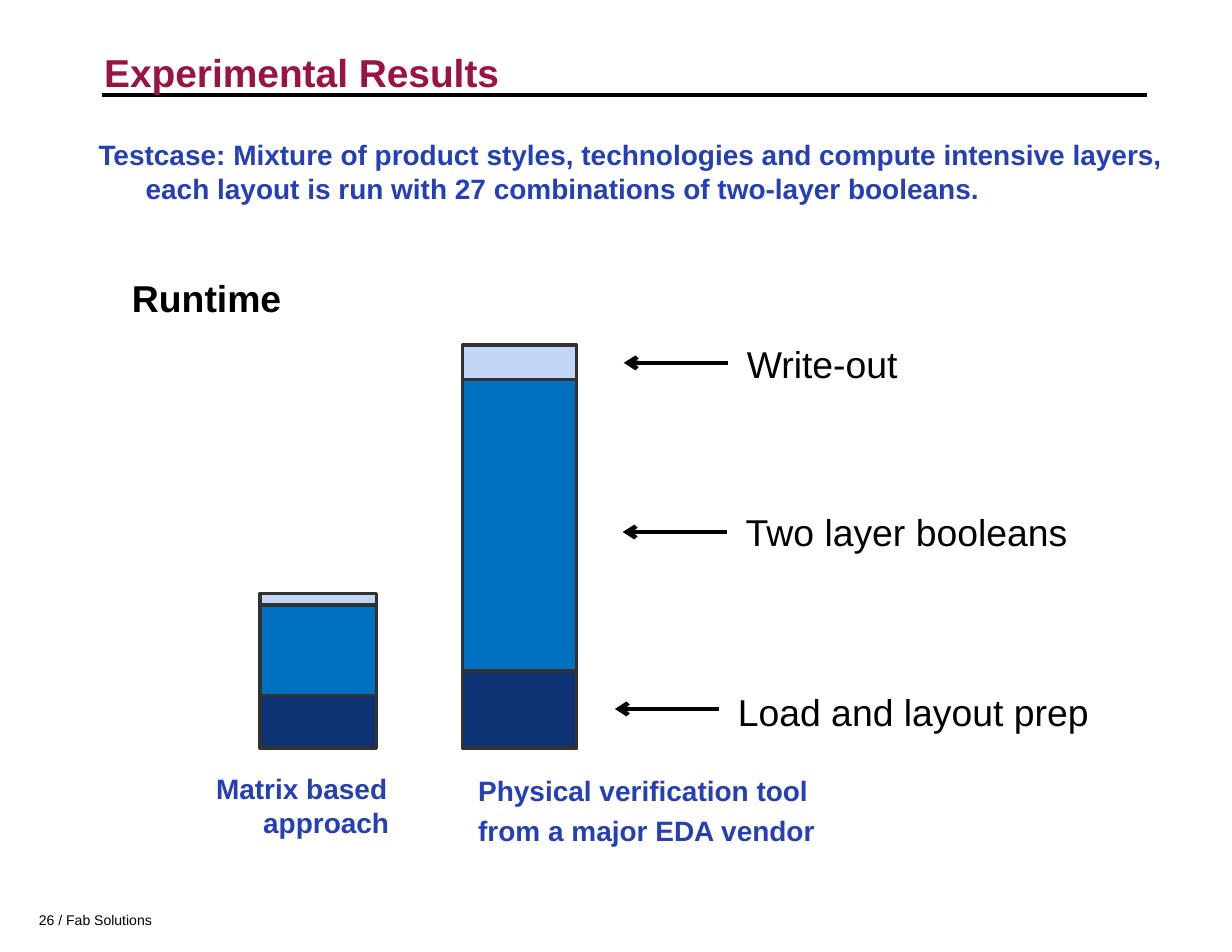
from lxml import etree
from pptx import Presentation
from pptx import util as u
from pptx.dml.color import RGBColor
from pptx.enum import shapes, text
from pptx.oxml import ns

BLACK, MAROON, BLUE, OUTLINE = "000000", "9B1244", "253FB6", "323232"
LOAD, BOOLEANS, OUTPUT = "0D3374", "0070C0", "C3D6F8"


def rgb(value):
    return RGBColor.from_string(value)


class RuntimeSlide:
    font = "Arial"

    def __init__(self, slide):
        self.slide = slide

    def label(self, box, lines, size, color=BLACK, bold=False, wrap=True,
              inset=(0.1, 0.05), hanging=0, before=0, spacing=None):
        holder = self.slide.shapes.add_textbox(*map(u.Inches, box))
        frame = holder.text_frame
        frame.word_wrap = wrap
        frame.vertical_anchor = text.MSO_ANCHOR.TOP
        frame.margin_left = frame.margin_right = u.Inches(inset[0])
        frame.margin_top = frame.margin_bottom = u.Inches(inset[1])
        for index, line in enumerate(lines):
            paragraph = frame.paragraphs[0] if index == 0 else frame.add_paragraph()
            if hanging:
                properties = paragraph._p.get_or_add_pPr()
                properties.set("marL", str(u.Inches(hanging)))
                properties.set("indent", str(-u.Inches(hanging)))
            if index:
                paragraph.space_before = u.Pt(before)
            if spacing:
                paragraph.line_spacing = spacing
            run = paragraph.add_run()
            run.text = line
            run.font.name, run.font.size, run.font.bold = self.font, u.Pt(size), bold
            run.font.color.rgb = rgb(color)

    def caption(self, box, *lines):
        self.label(box, lines, 18, BLUE, bold=True, inset=(0.11, 0.06),
                   hanging=0.42, before=3.6)

    def line(self, start, end, width, arrow=False):
        rule = self.slide.shapes.add_connector(
            shapes.MSO_CONNECTOR.STRAIGHT, *map(u.Inches, start + end))
        rule.line.color.rgb = rgb(BLACK)
        rule.line.width = u.Pt(width)
        properties = rule._element.spPr
        if arrow:
            outline = properties.find(ns.qn("a:ln"))
            etree.SubElement(outline, ns.qn("a:tailEnd"), type="arrow")
        etree.SubElement(properties, ns.qn("a:effectLst"))

    def stacked_bar(self, left, width, bottom, parts):
        """Stack the parts upwards from the bottom edge."""
        for height, color in parts:
            bottom -= height
            part = self.slide.shapes.add_shape(
                shapes.MSO_SHAPE.RECTANGLE, *map(u.Inches, (left, bottom, width, height)))
            part.shadow.inherit = False
            part.fill.solid()
            part.fill.fore_color.rgb = rgb(color)
            part.line.color.rgb = rgb(OUTLINE)
            part.line.width = u.Pt(2.25)


def main():
    deck = Presentation()
    deck.slide_width, deck.slide_height = u.Inches(11), u.Inches(8.5)
    results = RuntimeSlide(deck.slides.add_slide(deck.slide_layouts[6]))

    # Heading and footer
    results.line((0.91, 0.85), (10.24, 0.85), 2.5)
    results.label((0.25, 8.09, 1.3, 0.25), ["26 / Fab Solutions"], 9, wrap=False)
    results.label((0.93, 0.33, 9.3, 0.85), ["Experimental Results"], 25, MAROON,
                  bold=True, inset=(0, 0.06), spacing=1.1)

    # Test case and bar captions
    results.caption((0.77, 1.17, 9.73, 0.73),
                    "Testcase: Mixture of product styles, technologies and compute "
                    "intensive layers, each layout is run with 27 combinations of "
                    "two-layer booleans.")
    results.caption((4.16, 6.85, 3.33, 0.73),
                    "Physical verification tool", "from a major EDA vendor")
    results.caption((1.82, 6.83, 1.83, 0.73), "Matrix based approach")

    # Runtime phases, each with an arrow to the tall bar
    for phase, arrow_left, arrow_y, label_top in (
            ("Load and layout prep", 5.49, 6.33, 6.1),
            ("Two layer booleans", 5.56, 4.75, 4.5),
            ("Write-out", 5.57, 3.24, 3)):
        arrow_right = arrow_left + 0.93
        results.line((arrow_right, arrow_y), (arrow_left, arrow_y), 2.75, arrow=True)
        results.label((arrow_right + 0.07, label_top, 3.34, 0.5), [phase], 24)

    # Runtime bars
    results.label((1.08, 2.41, 1.55, 0.5), ["Runtime"], 24, bold=True, wrap=False)
    phase_colors = (LOAD, BOOLEANS, OUTPUT)
    for left, width, heights in ((4.13, 1.02, (0.69, 2.6, 0.31)),
                                 (2.32, 1.04, (0.47, 0.81, 0.1))):
        results.stacked_bar(left, width, 6.68, zip(heights, phase_colors))

    deck.save("out.pptx")


if __name__ == "__main__":
    main()
